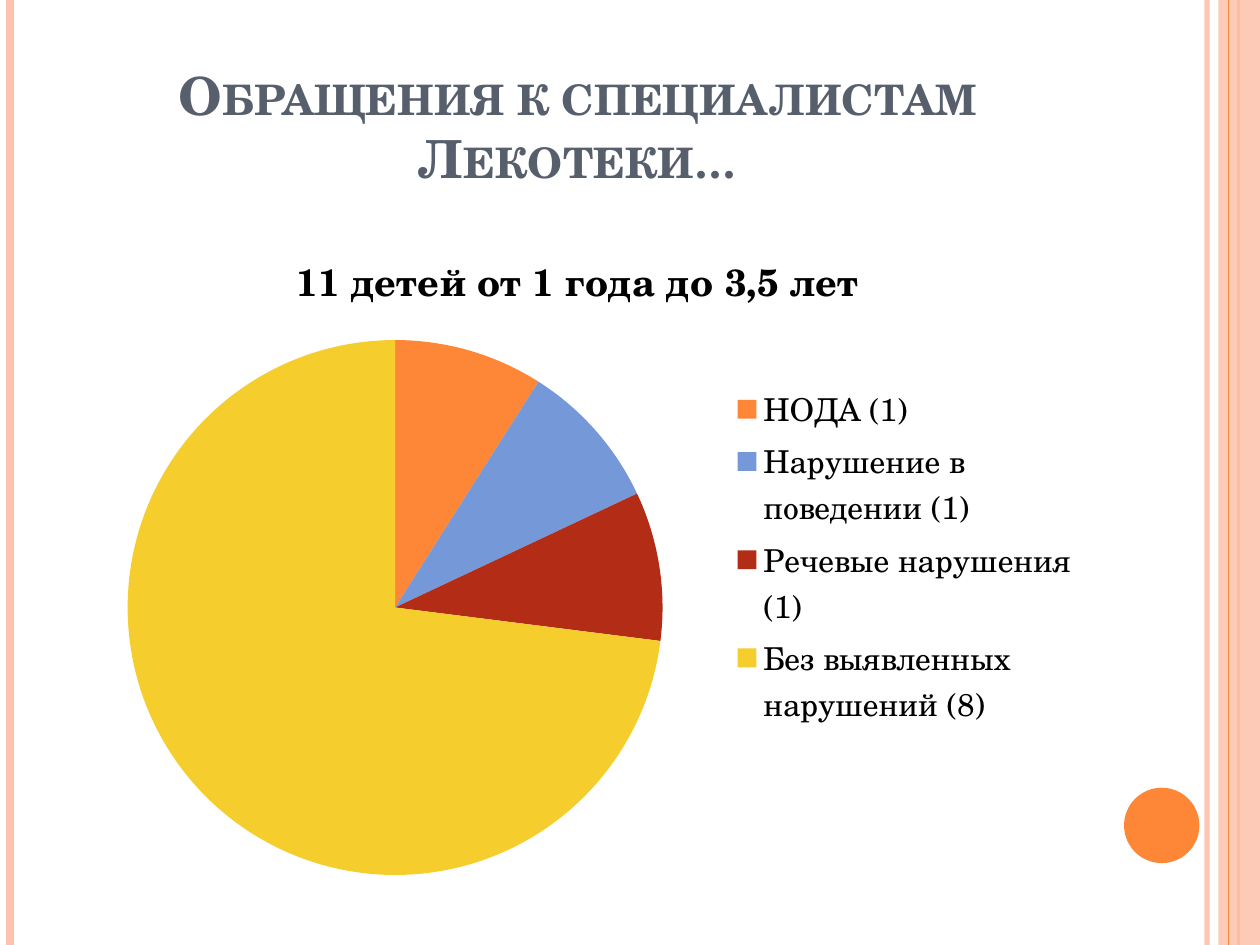
from collections import namedtuple
from dataclasses import dataclass

from lxml import etree
from pptx import Presentation
from pptx import util as u
from pptx.chart.data import CategoryChartData
from pptx.dml.color import RGBColor
from pptx.enum import chart as charts, shapes, text
from pptx.oxml.ns import qn

Box = namedtuple("Box", "left top width height")


@dataclass(frozen=True)
class Theme:
    """Colours, font and type sizes of the deck."""
    font: str = "TeX Gyre Schola"
    accent: str = "FE8637"
    blush: str = "FEC3AE"
    heading: str = "575F6D"
    ink: str = "000000"
    slices: tuple = ("FE8637", "7598D9", "B32C16", "F5CD2D")
    heading_size: float = 30
    chart_title_size: float = 21.6
    chart_size: float = 18


THEME = Theme()


def style_font(font, size, color, bold=False):
    """Apply the theme font with a size, colour and weight."""
    font.name, font.size, font.bold = THEME.font, u.Pt(size), bold
    font.color.rgb = RGBColor.from_string(color)


def set_opacity(shape, percent):
    """Make the solid colour of a shape or line partly transparent."""
    color = shape.element.spPr.find(f".//{qn('a:srgbClr')}")
    etree.SubElement(color, qn("a:alpha"), val=str(percent * 1000))


def add_stripe(page, box, offset, color, width, opacity=100):
    """Draw a vertical line over the full height of the box."""
    x = box.left + u.Cm(offset)
    stripe = page.shapes.add_connector(
        shapes.MSO_CONNECTOR.STRAIGHT, x, box.top, x, box.top + box.height)
    stripe.line.color.rgb = RGBColor.from_string(color)
    stripe.line.width = u.Pt(width)
    etree.SubElement(stripe.element.spPr, qn("a:effectLst"))
    if opacity < 100:
        set_opacity(stripe, opacity)


def add_plain_shape(page, kind, box, color):
    """Add a filled preset shape without outline or shadow."""
    shape = page.shapes.add_shape(kind, *box)
    shape.shadow.inherit = False
    shape.fill.solid()
    shape.fill.fore_color.rgb = RGBColor.from_string(color)
    shape.line.fill.background()
    return shape


def add_frame(page, box):
    """Decorate both edges of the page with stripes, a band and a disc."""
    add_stripe(page, box, 24.33, THEME.blush, 3, 93)
    add_stripe(page, box, 0.21, THEME.blush, 4.5)
    add_stripe(page, box, 24.97, THEME.accent, 1.5)
    band_width = u.Cm(0.84)
    band_box = Box(box.left + box.width - band_width, box.top, band_width, box.height)
    band = add_plain_shape(page, shapes.MSO_SHAPE.RECTANGLE, band_box, THEME.blush)
    set_opacity(band, 87)
    add_stripe(page, box, 24.77, THEME.accent, 0.75)
    disc_box = Box(box.left + u.Cm(22.66), box.top + u.Cm(15.88), u.Cm(1.52), u.Cm(1.52))
    add_plain_shape(page, shapes.MSO_SHAPE.OVAL, disc_box, THEME.accent)


def add_heading(page, box, wording):
    """Write the centred small-caps heading at the bottom of the box."""
    heading = page.shapes.add_textbox(*box)
    frame = heading.text_frame
    frame.word_wrap = True
    frame.vertical_anchor = text.MSO_ANCHOR.BOTTOM
    para = frame.paragraphs[0]
    para.text = wording
    para.alignment = text.PP_ALIGN.CENTER
    style_font(para.font, THEME.heading_size, THEME.heading, bold=True)
    heading.element.find(f".//{qn('a:defRPr')}").set("cap", "small")


def add_pie(page, box, title, counts):
    """Fill the box with a titled pie chart and a legend on the right."""
    data = CategoryChartData()
    data.categories = list(counts)
    data.add_series("Series 1", list(counts.values()))
    chart = page.shapes.add_chart(charts.XL_CHART_TYPE.PIE, *box, data).chart
    style_font(chart.font, THEME.chart_size, THEME.ink)
    chart.has_title = True
    para = chart.chart_title.text_frame.paragraphs[0]
    para.text = title
    style_font(para.font, THEME.chart_title_size, THEME.ink, bold=True)
    chart.chart_title.include_in_layout = False
    chart.has_legend = True
    chart.legend.position = charts.XL_LEGEND_POSITION.RIGHT
    chart.legend.include_in_layout = False
    plot = chart.plots[0]
    plot.vary_by_categories = True
    for index, color in enumerate(THEME.slices):
        fill = plot.series[0].points[index].format.fill
        fill.solid()
        fill.fore_color.rgb = RGBColor.from_string(color)


def main():
    """Build the deck and save it."""
    deck = Presentation()
    deck.slide_width, deck.slide_height = u.Cm(25.4), u.Cm(19.05)
    page = deck.slides.add_slide(deck.slide_layouts[6])
    left, width = u.Cm(1.27), u.Cm(20.75)
    add_frame(page, Box(0, 0, deck.slide_width, deck.slide_height))
    add_heading(page, Box(left, u.Cm(0.76), width, u.Cm(3.18)),
                "Обращения к специалистам Лекотеки…")
    add_pie(page, Box(left, u.Cm(4.45), width, u.Cm(13.54)),
            "11 детей от 1 года до 3,5 лет",
            {"НОДА (1)": 9,
             "Нарушение в поведении (1)": 9,
             "Речевые нарушения (1)": 9,
             "Без выявленных нарушений (8)": 73})
    deck.save("out.pptx")


if __name__ == "__main__":
    main()
